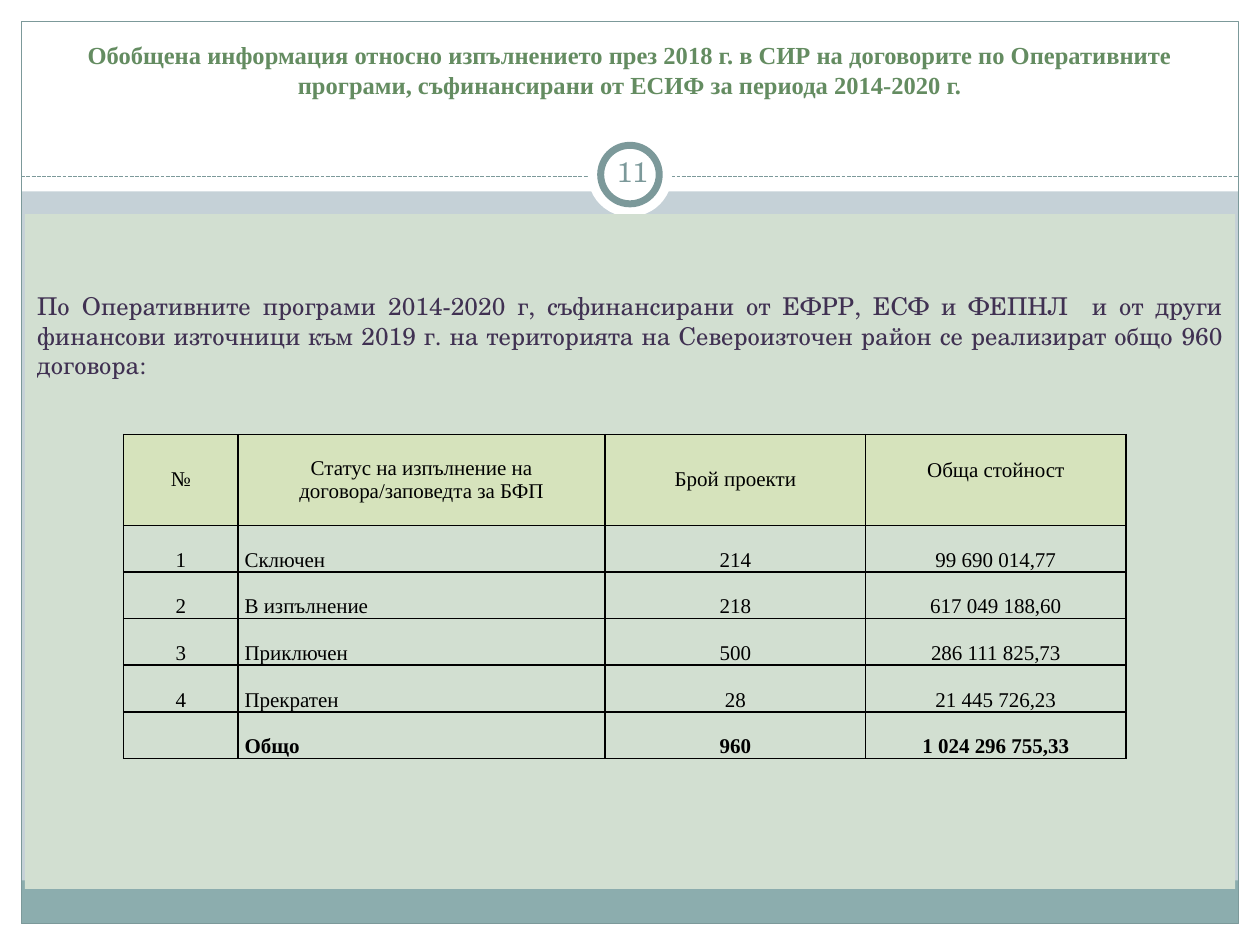
from lxml import etree
from pptx import Presentation
from pptx.dml.color import RGBColor
from pptx.enum.dml import MSO_LINE
from pptx.enum.shapes import MSO_CONNECTOR, MSO_SHAPE
from pptx.enum.text import MSO_ANCHOR, PP_ALIGN
from pptx.oxml import parse_xml
from pptx.oxml.ns import nsdecls, qn
from pptx.util import Cm, Pt

RECT, OVAL = MSO_SHAPE.RECTANGLE, MSO_SHAPE.OVAL
STRAIGHT = MSO_CONNECTOR.STRAIGHT
SHORT_DASH = MSO_LINE.SQUARE_DOT
LEFT, CENTER, JUSTIFY = PP_ALIGN.LEFT, PP_ALIGN.CENTER, PP_ALIGN.JUSTIFY
TOP, MIDDLE, BOTTOM = MSO_ANCHOR.TOP, MSO_ANCHOR.MIDDLE, MSO_ANCHOR.BOTTOM

SERIF, SCHOLA = "Times New Roman", "TeX Gyre Schola"
WHITE, BLACK, TEAL, SEA = "FFFFFF", "000000", "7C999A", "8CADAE"
BACKDROP, PANEL, HEADER = "C5D1D7", "D2DFD1", "D6E3BC"
GREEN, PURPLE = "648C61", "403152"
WIDTH, HEIGHT, EDGE = 25.4, 19.05, 0.43

TITLE = ("Обобщена информация относно изпълнението през 2018 г. в СИР на договорите "
         "по Оперативните програми, съфинансирани от ЕСИФ за периода 2014-2020 г.")
INTRO = ("По Оперативните програми 2014-2020 г, съфинансирани от ЕФРР, ЕСФ и ФЕПНЛ  и от "
         "други финансови източници към 2019 г. на територията на Североизточен район се "
         "реализират общо 960 договора:")
CONTRACTS = [
    ("№", "Статус на изпълнение на договора/заповедта за БФП", "Брой проекти", "Обща стойност"),
    ("1", "Сключен", "214", "99 690 014,77"),
    ("2", "В изпълнение", "218", "617 049 188,60"),
    ("3", "Приключен", "500", "286 111 825,73"),
    ("4", "Прекратен", "28", "21 445 726,23"),
    ("", "Общо", "960", "1 024 296 755,33"),
]


def rgb(value):
    return RGBColor.from_string(value)


class Page:
    def __init__(self, slide):
        self.slide = slide
        slide.background.fill.solid()
        slide.background.fill.fore_color.rgb = rgb(BACKDROP)

    def shape(self, kind, x, y, w, h, fill=None, line=None, weight=0.75):
        shape = self.slide.shapes.add_shape(kind, Cm(x), Cm(y), Cm(w), Cm(h))
        shape.shadow.inherit = False
        if fill:
            shape.fill.solid()
            shape.fill.fore_color.rgb = rgb(fill)
        else:
            shape.fill.background()
        if line:
            shape.line.color.rgb = rgb(line)
            shape.line.width = Pt(weight)
        else:
            shape.line.fill.background()
        return shape

    def rule(self, x1, x2, y):
        """Draw a dashed horizontal line."""
        rule = self.slide.shapes.add_connector(STRAIGHT, Cm(x1), Cm(y), Cm(x2), Cm(y))
        rule.line.color.rgb = rgb(TEAL)
        rule.line.width = Pt(0.75)
        rule.line.dash_style = SHORT_DASH
        etree.SubElement(rule._element.spPr, qn("a:effectLst"))

    def add_text(self, frame, text, size, font, color, align, bold=False):
        paragraph = frame.paragraphs[0]
        paragraph.alignment = align
        if text:
            run = paragraph.add_run()
            run.text = text
            run.font.size, run.font.name, run.font.bold = Pt(size), font, bold
            run.font.color.rgb = rgb(color)
        return paragraph

    def inset(self, frame, side, top, bottom, anchor):
        frame.margin_left = frame.margin_right = Cm(side)
        frame.margin_top, frame.margin_bottom = Cm(top), Cm(bottom)
        frame.vertical_anchor = anchor

    def text_box(self, x, y, w, h, side, top, bottom, anchor):
        frame = self.slide.shapes.add_textbox(Cm(x), Cm(y), Cm(w), Cm(h)).text_frame
        frame.word_wrap = True
        self.inset(frame, side, top, bottom, anchor)
        return frame

    def cell_borders(self, cell):
        properties = cell._tc.get_or_add_tcPr()
        for side in ("lnL", "lnR", "lnT", "lnB"):
            properties.append(parse_xml(
                f'<a:{side} {nsdecls("a")} w="{Pt(1)}"><a:solidFill>'
                f'<a:srgbClr val="{BLACK}"/></a:solidFill></a:{side}>'))

    def table(self, x, y, widths, heights, rows):
        """Fill a bordered table with a header row first and a bold total row last."""
        table = self.slide.shapes.add_table(
            len(rows), len(widths), Cm(x), Cm(y), Cm(sum(widths)), Cm(sum(heights))).table
        table.horz_banding = False
        for column, width in zip(table.columns, widths):
            column.width = Cm(width)
        for r, (row, height) in enumerate(zip(rows, heights)):
            table.rows[r].height = Cm(height)
            for c, text in enumerate(row):
                cell = table.cell(r, c)
                self.cell_borders(cell)
                if r == 0:
                    cell.fill.solid()
                    cell.fill.fore_color.rgb = rgb(HEADER)
                else:
                    cell.fill.background()
                self.inset(cell, 0.13, 0, 0, MIDDLE if r == 0 else BOTTOM)
                align = LEFT if c == 1 and r > 0 else CENTER
                self.add_text(cell.text_frame, text, 12, SERIF, BLACK, align, r == len(rows) - 1)
        return table


def main():
    deck = Presentation()
    deck.slide_width, deck.slide_height = Cm(WIDTH), Cm(HEIGHT)
    page = Page(deck.slides.add_slide(deck.slide_layouts[6]))

    for band in [(0, HEIGHT - EDGE, WIDTH, EDGE), (0, 0, WIDTH, 3.86),
                 (0, 0, EDGE, HEIGHT), (WIDTH - EDGE, 0, EDGE, HEIGHT)]:
        page.shape(RECT, *band, fill=WHITE)
    page.shape(RECT, EDGE, 17.75, WIDTH - 2 * EDGE, 0.87, fill=SEA)
    page.shape(RECT, EDGE, EDGE, WIDTH - 2 * EDGE, HEIGHT - 2 * EDGE, line=TEAL)
    page.rule(EDGE, WIDTH - EDGE, 3.56)
    page.shape(OVAL, 11.85, 2.67, 1.7, 1.7, fill=WHITE)
    page.shape(OVAL, 12.11, 2.93, 1.18, 1.18, fill=WHITE, line=TEAL, weight=4)

    title = page.text_box(0.85, 0.64, 23.7, 2.1, 0.25, 0.13, 0.73, BOTTOM)
    page.add_text(title, TITLE, 14, SERIF, GREEN, CENTER, bold=True).line_spacing = Pt(17)

    intro = page.shape(RECT, 0.5, 4.32, 24.4, 13.6, fill=PANEL).text_frame
    intro.word_wrap = True
    page.inset(intro, 0.25, 1.55, 0.13, TOP)
    page.add_text(intro, INTRO, 14, SCHOLA, PURPLE, JUSTIFY)

    number = page.text_box(12.11, 2.85, 1.28, 1.22, 0.13, 0.13, 0.13, MIDDLE)
    page.add_text(number, "11", 16, SCHOLA, TEAL, CENTER)

    contracts = page.table(2.49, 8.76, [2.31, 7.4, 5.25, 5.25], [1.83] + [0.94] * 5, CONTRACTS)
    total_value = contracts.cell(0, 3)
    total_value.vertical_anchor = TOP
    total_value.margin_top = Cm(0.48)

    deck.save("out.pptx")


if __name__ == "__main__":
    main()
